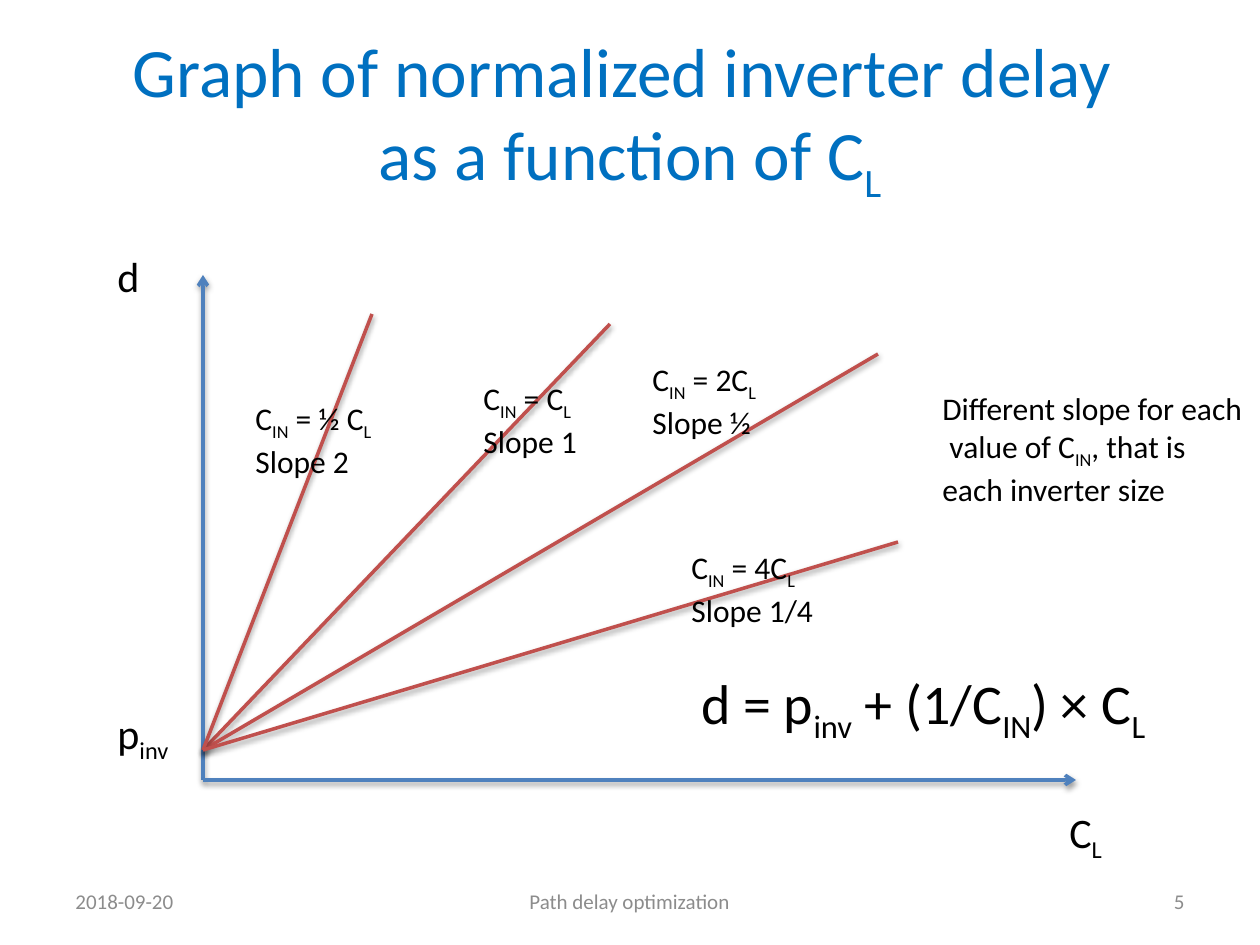
from lxml import etree
from pptx import Presentation
from pptx import util as u
from pptx.dml.color import RGBColor
from pptx.enum import shapes, text
from pptx.oxml import parse_xml
from pptx.oxml.ns import nsdecls, qn

PX = 914400 / 126
FONT = "Calibri"
TITLE_BLUE = RGBColor(0x00, 0x70, 0xC0)
AXIS_BLUE = RGBColor(0x4F, 0x81, 0xBD)
CURVE_RED = RGBColor(0xC0, 0x50, 0x4D)
BLACK = RGBColor(0, 0, 0)
GREY = RGBColor(0x8C, 0x8C, 0x8C)
LEFT, CENTER, RIGHT = text.PP_ALIGN.LEFT, text.PP_ALIGN.CENTER, text.PP_ALIGN.RIGHT

SHADOW = (
    f'<a:effectLst {nsdecls("a")}>'
    '<a:outerShdw blurRad="40000" dist="20000" dir="5400000" rotWithShape="0">'
    '<a:srgbClr val="000000"><a:alpha val="38000"/></a:srgbClr>'
    '</a:outerShdw></a:effectLst>'
)


def px(n):
    return u.Emu(round(n * PX))


def write(tf, lines, size, color, align=LEFT):
    """Write one paragraph per line; text between ~ marks is subscript."""
    for i, line in enumerate(lines):
        p = tf.paragraphs[0] if i == 0 else tf.add_paragraph()
        p.alignment = align
        p.font.size, p.font.name = u.Pt(size), FONT
        p.font.color.rgb = color
        for j, part in enumerate(line.split("~")):
            for k, piece in enumerate(part.split("\v")):
                if k:
                    p.add_line_break()
                if piece:
                    r = p.add_run()
                    r.text = piece
                    if j % 2:
                        r._r.get_or_add_rPr().set("baseline", "-25000")


def add_label(s, box, lines, size, color=BLACK, align=LEFT, wrap=False):
    sp = s.shapes.add_textbox(*map(px, box))
    tf = sp.text_frame
    tf.word_wrap = wrap
    tf.auto_size = text.MSO_AUTO_SIZE.SHAPE_TO_FIT_TEXT
    write(tf, lines, size, color, align)
    return sp


def add_line(s, start, end, color, arrow=False):
    line = s.shapes.add_connector(
        shapes.MSO_CONNECTOR.STRAIGHT, *map(px, (*start, *end)))
    line.line.color.rgb = color
    line.line.width = u.Pt(2)
    if arrow:
        etree.SubElement(line.line._get_or_add_ln(), qn("a:tailEnd"), type="arrow")
    line._element.spPr.append(parse_xml(SHADOW))


def add_title(s, box):
    title = s.shapes.title
    title.left, title.top, title.width, title.height = map(px, box)
    tf = title.text_frame
    tf.auto_size = text.MSO_AUTO_SIZE.NONE
    tf.vertical_anchor = text.MSO_ANCHOR.MIDDLE
    write(tf, ["Graph of normalized inverter delay \vas a function of C~L~"],
          39.6, TITLE_BLUE, CENTER)


def add_graph(s, box):
    x, y, w, h = box
    corner = (x, y + h)
    start = (x, y + h - 30)

    # Axes and their names
    add_line(s, corner, (x, y), AXIS_BLUE, arrow=True)
    add_line(s, corner, (x + w, y + h), AXIS_BLUE, arrow=True)
    add_label(s, (x + w - 19, y + h + 20, 89, 63), ["C~L~"], 24, wrap=True)
    add_label(s, (x - 98, y - 31, 48, 63), ["d"], 24)
    add_label(s, (x - 98, y + h - 79, 83, 63), ["p~inv~"], 24)

    # Delay lines: end point, label box, size of C_IN, slope
    curves = [
        ((407, 49), (268, 98, 120, 89), "", "1"),
        ((675, 79), (437, 79, 134, 89), "2", "½"),
        ((169, 39), (40, 118, 146, 89), "½ ", "2"),
        ((695, 267), (476, 267, 149, 89), "4", "1/4"),
    ]
    for (ex, ey), _, _, _ in curves:
        add_line(s, start, (x + ex, y + ey), CURVE_RED)
    for _, (lx, ly, lw, lh), factor, slope in curves:
        add_label(s, (x + lx, y + ly, lw, lh),
                  [f"C~IN~ = {factor}C~L~", f"Slope {slope}"], 18)


def add_remarks(s, box):
    x, y, w, h = box
    add_label(s, (x + 241, y, w - 241, 165),
              ["Different slope for each", " value of C~IN~, that is",
               "each inverter size"], 18)
    add_label(s, (x, y + h - 81, 483, 81),
              ["d = p~inv~ + (1/C~IN~) × C~L~"], 32)


def add_footer(s, box):
    x, y, w, h = box
    parts = [
        (0, 294, "2018-09-20", LEFT),
        ((w - 399) // 2, 399, "Path delay optimization", CENTER),
        (w - 294, 294, "5", RIGHT),
    ]
    for dx, width, words, align in parts:
        sp = add_label(s, (x + dx, y, width, h), [words], 12, GREY, align, wrap=True)
        sp.text_frame.auto_size = text.MSO_AUTO_SIZE.NONE
        sp.text_frame.vertical_anchor = text.MSO_ANCHOR.MIDDLE


def main():
    prs = Presentation()
    prs.slide_width, prs.slide_height = px(1260), px(945)
    s = prs.slides.add_slide(prs.slide_layouts[5])
    add_title(s, (63, 38, 1134, 158))
    add_graph(s, (203, 275, 873, 505))
    add_remarks(s, (689, 383, 571, 360))
    add_footer(s, (63, 876, 1134, 50))
    prs.save("out.pptx")


if __name__ == "__main__":
    main()
